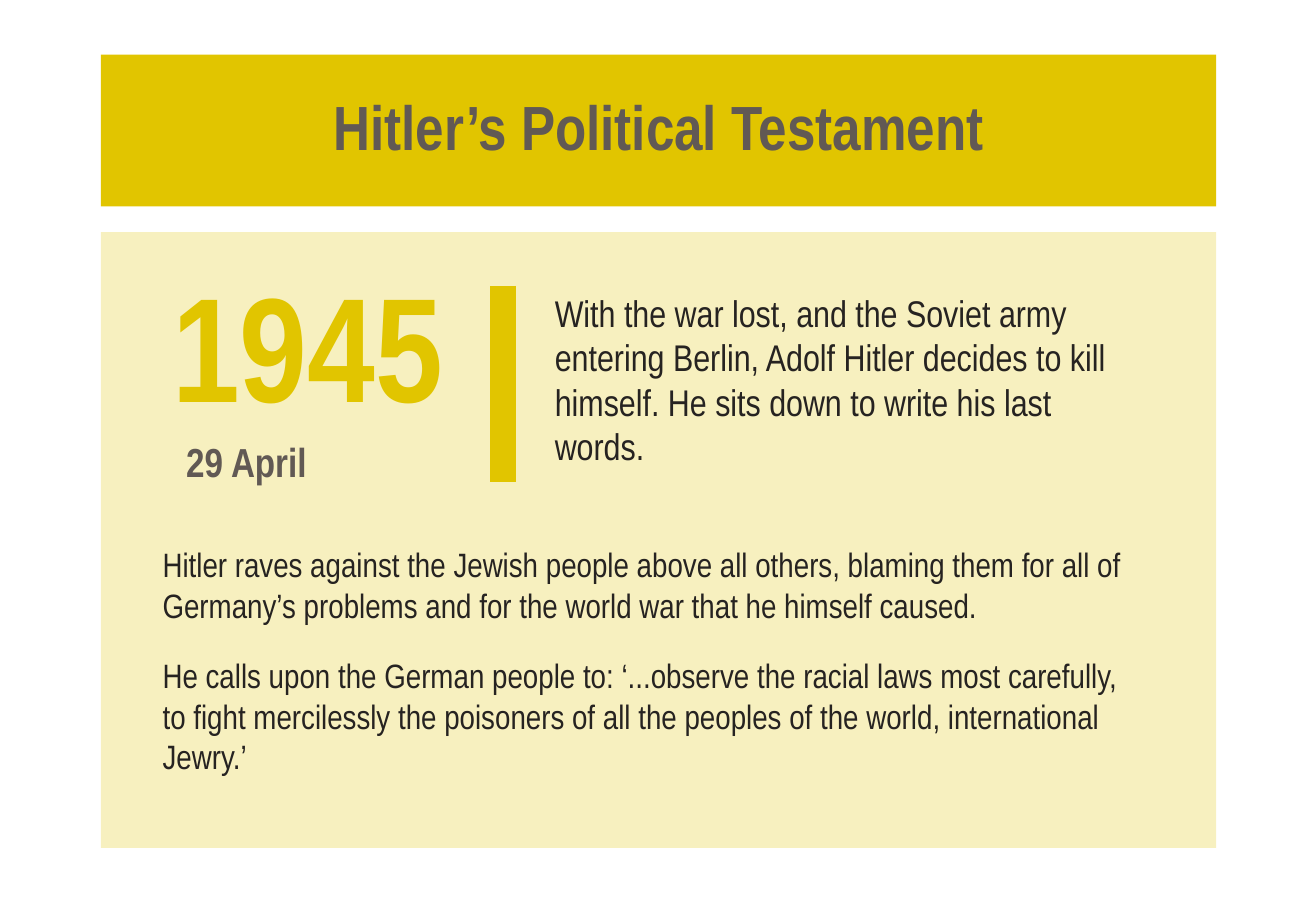
from lxml.etree import SubElement
from pptx import Presentation
from pptx.dml.color import RGBColor
from pptx.enum.shapes import MSO_CONNECTOR, MSO_SHAPE
from pptx.enum.text import MSO_ANCHOR, PP_ALIGN
from pptx.oxml.ns import qn
from pptx.util import Pt

FONT = "Arial Narrow"
COLORS = {"gold": "E1C500", "brown": "615954", "ink": "262321"}

TITLE = "Hitler’s Political Testament"
DATE_RUNS = [  # text, size, colour; a line break is written as \v
    ("1945", 88, "gold"),
    (" ", 44, "gold"),
    ("\v", None, None),
    (" ", 36, "gold"),
    ("29 April", 24, "brown"),
]
INTRO = ("With the war lost, and the Soviet army entering Berlin, Adolf Hitler "
         "decides to kill himself. He sits down to write his last words.")
BODY = [
    "Hitler raves against the Jewish people above all others, blaming them for all of "
    "Germany’s problems and for the world war that he himself caused.",
    "He calls upon the German people to: ‘...observe the racial laws most carefully, "
    "to fight mercilessly the poisoners of all the peoples of the world, international Jewry.’",
]

# left, top, width, height in points
PANEL_BOX = (59.8, 137.6, 661, 365)
TITLE_BOX = (59.8, 32.4, 661, 90)
DATE_BOX = (95, 162.7, 190, 135.4)
INTRO_BOX = (321.8, 157, 362.9, 135.4)
BODY_BOX = (89.3, 318.8, 595.4, 135.4)
DIVIDER_X, DIVIDER_TOP, DIVIDER_BOTTOM = 298.1, 169.4, 285.8


def rgb(name):
    return RGBColor.from_string(COLORS[name])


def style(run, size, color, bold=False):
    run.font.name = FONT
    run.font.size = Pt(size)
    run.font.bold = bold
    run.font.color.rgb = rgb(color)


def add_panel(slide, box):
    panel = slide.shapes.add_shape(MSO_SHAPE.RECTANGLE, *map(Pt, box))
    panel.shadow.inherit = False
    panel.fill.solid()
    panel.fill.fore_color.rgb = rgb("gold")
    panel.line.fill.background()
    return panel


def add_text(slide, box, paragraphs, size, anchor, space_after=0):
    frame = slide.shapes.add_textbox(*map(Pt, box)).text_frame
    frame.word_wrap = True
    frame.vertical_anchor = anchor
    frame.text = "\n".join(paragraphs)
    for paragraph in frame.paragraphs:
        paragraph.space_after = Pt(space_after)
        for run in paragraph.runs:
            style(run, size, "ink")


def add_date(slide):
    frame = slide.shapes.add_textbox(*map(Pt, DATE_BOX)).text_frame
    frame.word_wrap = True
    frame.vertical_anchor = MSO_ANCHOR.MIDDLE
    date = frame.paragraphs[0]
    date.line_spacing = 0.8
    for text, size, color in DATE_RUNS:
        if text == "\v":
            date.add_line_break()
        else:
            run = date.add_run()
            run.text = text
            style(run, size, color, bold=True)


def add_divider(slide):
    divider = slide.shapes.add_connector(
        MSO_CONNECTOR.STRAIGHT, Pt(DIVIDER_X), Pt(DIVIDER_TOP),
        Pt(DIVIDER_X), Pt(DIVIDER_BOTTOM))
    divider.line.color.rgb = rgb("gold")
    divider.line.width = Pt(15)
    SubElement(divider._element.spPr, qn("a:effectLst"))


def add_title(slide):
    frame = add_panel(slide, TITLE_BOX).text_frame
    frame.word_wrap = True
    frame.vertical_anchor = MSO_ANCHOR.MIDDLE
    frame.text = TITLE
    title = frame.paragraphs[0]
    title.alignment = PP_ALIGN.CENTER
    title.line_spacing = 0.9
    style(title.runs[0], 37, "brown", bold=True)


def main():
    prs = Presentation()
    prs.slide_width, prs.slide_height = Pt(780), Pt(540)
    slide = prs.slides.add_slide(prs.slide_layouts[6])

    panel = add_panel(slide, PANEL_BOX)
    gold = panel._element.spPr.find(qn("a:solidFill")).find(qn("a:srgbClr"))
    SubElement(gold, qn("a:alpha"), val="25000")

    add_title(slide)
    add_text(slide, BODY_BOX, BODY, 20, MSO_ANCHOR.TOP, space_after=18)
    add_date(slide)
    add_divider(slide)
    add_text(slide, INTRO_BOX, [INTRO], 22, MSO_ANCHOR.MIDDLE)
    prs.save("out.pptx")


if __name__ == "__main__":
    main()
